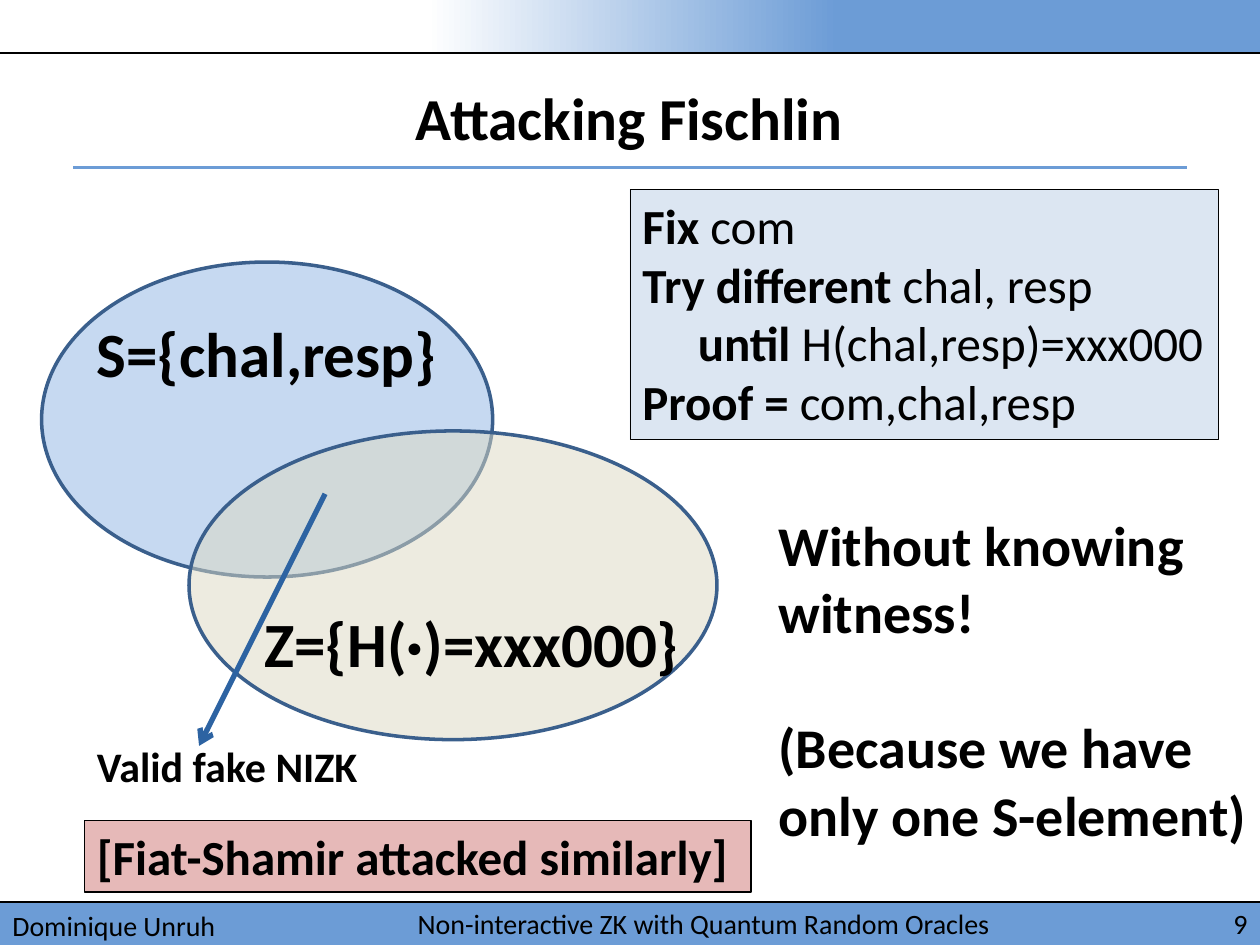
from lxml.etree import SubElement
from pptx import Presentation
from pptx.dml.color import RGBColor
from pptx.enum.shapes import MSO_CONNECTOR as Connector, MSO_SHAPE as Shape
from pptx.enum.text import MSO_ANCHOR as Anchor, PP_ALIGN as Align
from pptx.oxml.ns import qn
from pptx.util import Inches, Pt

COLORS = {
    "black": "000000", "white": "FFFFFF", "band": "6C9CD6", "algorithm": "DCE6F2",
    "set_s": "C6D9F1", "set_z": "DDD9C3", "outline": "3A5F8C", "arrow": "2D63A2",
    "remark": "E6B9B8",
}
TITLE = "Attacking Fischlin"
ALGORITHM = [
    [("Fix ", True), ("com", False)],
    [("Try different ", True), ("chal, resp", False)],
    [("until", True), (" H(chal,resp)=xxx000", False)],
    [("Proof = ", True), ("com,chal,resp", False)],
]
ALGORITHM_INDENTS = {2: 0.44}
CONCLUSION = ["Without knowing\vwitness!", "(Because we have\vonly one S-element)"]
FOOTERS = [
    ("Dominique Unruh", (0, 7.16, 2.73, 0.34), Align.LEFT, Anchor.TOP),
    ("Non-interactive ZK with Quantum Random Oracles", (2.42, 7.16, 6.33, 0.34),
     Align.CENTER, Anchor.MIDDLE),
    ("9", (9.33, 7.16, 0.67, 0.34), Align.RIGHT, Anchor.MIDDLE),
]
RULES = [
    ((0, 0.42), (10.02, 0.42), "black", 0.75),
    ((0, 7.16), (10.02, 7.16), "black", 0.75),
    ((0.58, 1.33), (9.42, 1.33), "band", 2),
]
SETS = [
    ((0.33, 2.08, 3.58, 2.5), "set_s", None, "S={chal,resp}", (0.67, 2.45, 2.93, 0.71)),
    ((1.5, 3.42, 4.19, 2.45), "set_z", 50, "Z={H(·)=xxx000}", (2, 4.75, 3.52, 0.71)),
]


def color(name):
    return RGBColor.from_string(COLORS[name])


def add_box(slide, box, fill=None, line=None, width=1, kind=Shape.RECTANGLE, opacity=None):
    shape = slide.shapes.add_shape(kind, *map(Inches, box))
    shape.shadow.inherit = False
    if fill:
        shape.fill.solid()
        shape.fill.fore_color.rgb = color(fill)
    if opacity:
        fill_color = shape.fill._xPr.find(qn("a:solidFill"))[0]
        SubElement(fill_color, qn("a:alpha"), val=str(opacity * 1000))
    if line:
        shape.line.color.rgb = color(line)
        shape.line.width = Pt(width)
    else:
        shape.line.fill.background()
    return shape


def add_line(slide, start, end, line, width, arrow=False):
    connector = slide.shapes.add_connector(Connector.STRAIGHT, *map(Inches, start + end))
    connector.line.color.rgb = color(line)
    connector.line.width = Pt(width)
    if arrow:
        SubElement(connector.line._get_or_add_ln(), qn("a:tailEnd"), type="arrow")
    SubElement(connector._element.spPr, qn("a:effectLst"))


def write(shape, paragraphs, size, bold=True, align=Align.LEFT, anchor=Anchor.TOP,
          wrap=False, gap=0, indents=None):
    frame = shape.text_frame
    frame.word_wrap = wrap
    frame.vertical_anchor = anchor
    for index, content in enumerate(paragraphs):
        paragraph = frame.add_paragraph() if index else frame.paragraphs[0]
        paragraph.alignment = align
        if index and gap:
            paragraph.space_before = Pt(gap)
        if indents and index in indents:
            paragraph._p.get_or_add_pPr().set("marL", str(Inches(indents[index])))
        runs = [(content, bold)] if isinstance(content, str) else content
        for text, is_bold in runs:
            for position, part in enumerate(text.split("\v")):
                if position:
                    paragraph.add_line_break()
                run = paragraph.add_run()
                run.text = part
                run.font.name = "Calibri"
                run.font.size = Pt(size)
                run.font.bold = is_bold
                run.font.color.rgb = color("black")


def add_text(slide, box, paragraphs, size, **formatting):
    write(slide.shapes.add_textbox(*map(Inches, box)), paragraphs, size, **formatting)


def add_frame(slide):
    add_box(slide, (0, 7.16, 10, 0.34), "band")
    header = add_box(slide, (2.73, 0, 7.27, 0.42))
    header.fill.gradient()
    header.fill.gradient_angle = 0
    for stop, (position, name) in zip(header.fill.gradient_stops,
                                      [(0.09, "white"), (0.54, "band")]):
        stop.position = position
        stop.color.rgb = color(name)
    for rule in RULES:
        add_line(slide, *rule)
    for text, box, align, anchor in FOOTERS:
        add_text(slide, box, [text], 16, bold=False, align=align, anchor=anchor, wrap=True)


def add_title(slide):
    title = slide.shapes.title
    title.left, title.top, title.width, title.height = map(Inches, (0.58, 0.5, 8.83, 0.85))
    write(title, [TITLE], 34, align=Align.CENTER, anchor=Anchor.MIDDLE, wrap=True)


def main():
    presentation = Presentation()
    presentation.slide_width, presentation.slide_height = Inches(10), Inches(7.5)
    slide = presentation.slides.add_slide(presentation.slide_layouts[5])
    add_frame(slide)
    add_title(slide)

    algorithm = add_box(slide, (5, 1.5, 4.67, 1.99), "algorithm", "black", 0.25)
    write(algorithm, ALGORITHM, 28, wrap=True, indents=ALGORITHM_INDENTS)

    for box, fill, opacity, label, label_box in SETS:
        add_box(slide, box, fill, "outline", 2, Shape.OVAL, opacity)
        add_text(slide, label_box, [label], 36)

    add_line(slide, (2.58, 3.92), (1.58, 5.92), "arrow", 3, arrow=True)
    add_text(slide, (0.67, 5.83, 2.29, 0.5), ["Valid fake NIZK"], 24)
    add_text(slide, (6.08, 4, 3.95, 2.79), CONCLUSION, 32, gap=39)

    remark = add_box(slide, (0.67, 6.51, 5.29, 0.57), "remark", "black", 0.75)
    write(remark, ["[Fiat-Shamir attacked similarly]"], 28)
    presentation.save("out.pptx")


if __name__ == "__main__":
    main()
